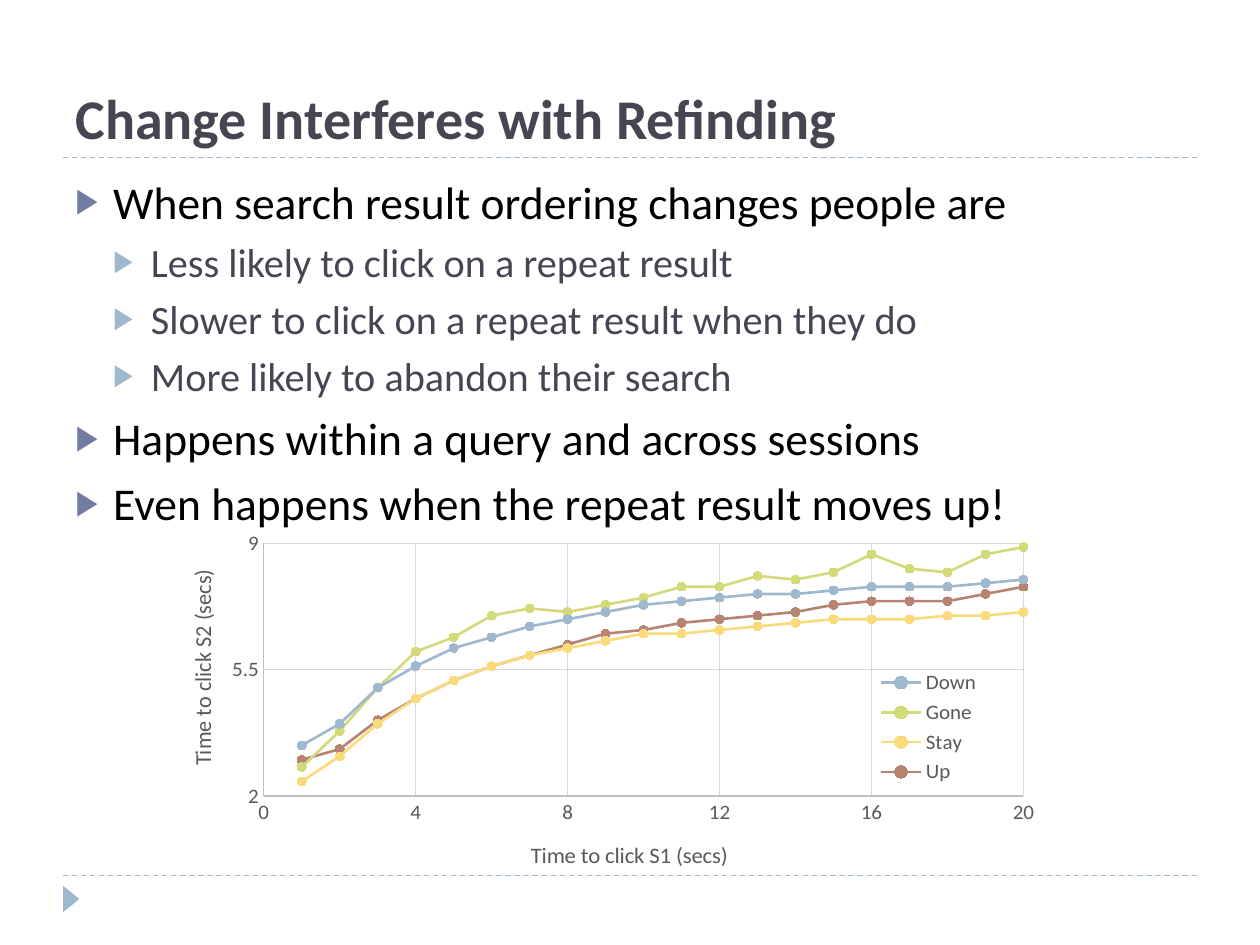
from lxml.etree import SubElement
from pptx import Presentation
from pptx.chart.data import XyChartData
from pptx.dml.color import RGBColor
from pptx.enum.chart import XL_CHART_TYPE, XL_LEGEND_POSITION, XL_MARKER_STYLE, XL_TICK_MARK
from pptx.enum.dml import MSO_LINE
from pptx.enum.shapes import MSO_CONNECTOR, MSO_SHAPE
from pptx.enum.text import MSO_ANCHOR, MSO_AUTO_SIZE, PP_ALIGN
from pptx.oxml import parse_xml
from pptx.oxml.ns import nsdecls, qn
from pptx.util import Inches, Pt

# Content
FONT = "Calibri"
TITLE = "Change Interferes with Refinding"
BULLETS = [
    (0, "When search result ordering changes people are"),
    (1, "Less likely to click on a repeat result"),
    (1, "Slower to click on a repeat result when they do"),
    (1, "More likely to abandon their search"),
    (0, "Happens within a query and across sessions"),
    (0, "Even happens when the repeat result moves up!"),
]
# Per level: text size, text colour, bullet colour, space before
LEVELS = [(26, "000000", "727CA3", 6), (23, "464653", "9FB8CD", 5)]
CLICK_TIMES = [
    ("Down", "9FB8CD", [3.4, 4, 5, 5.6, 6.1, 6.4, 6.7, 6.9, 7.1, 7.3,
                        7.4, 7.5, 7.6, 7.6, 7.7, 7.8, 7.8, 7.8, 7.9, 8]),
    ("Gone", "D2DA7A", [2.8, 3.8, 5, 6, 6.4, 7, 7.2, 7.1, 7.3, 7.5,
                        7.8, 7.8, 8.1, 8, 8.2, 8.7, 8.3, 8.2, 8.7, 8.9]),
    ("Stay", "FADA7A", [2.4, 3.1, 4, 4.7, 5.2, 5.6, 5.9, 6.1, 6.3, 6.5,
                        6.5, 6.6, 6.7, 6.8, 6.9, 6.9, 6.9, 7, 7, 7.1]),
    ("Up", "B88472", [3, 3.3, 4.1, 4.7, 5.2, 5.6, 5.9, 6.2, 6.5, 6.6,
                      6.8, 6.9, 7, 7.1, 7.3, 7.4, 7.4, 7.4, 7.6, 7.8]),
]
ACCENT, CHART_TEXT = "9FB8CD", "595959"


def rgb(color):
    return RGBColor.from_string(color)


def style_font(font, size, color, bold=False):
    font.name, font.size, font.bold = FONT, Pt(size), bold
    font.color.rgb = rgb(color)


def style_line(line, color, width):
    line.color.rgb = rgb(color)
    line.width = Pt(width)


def add_bullet(paragraph, level):
    size, color, bullet_color, space = LEVELS[level]
    paragraph.level = level
    paragraph.space_before = Pt(space)
    properties = paragraph._p.get_or_add_pPr()
    properties.set("marL", str(Inches(0.3 * (level + 1))))
    properties.set("indent", str(Inches(-0.3)))
    bullet = SubElement(properties, qn("a:buClr"))
    SubElement(bullet, qn("a:srgbClr"), val=bullet_color)
    SubElement(properties, qn("a:buSzPct"), val="76000")
    SubElement(properties, qn("a:buFont"), typeface="Arial")
    SubElement(properties, qn("a:buChar"), char="▶")
    return size, color


def place(element, x, y, width=None, height=None, inner=False):
    """Set a manual layout, in fractions of the chart area."""
    layout = element.find(qn("c:layout"))
    if layout is None:
        layout = parse_xml(f"<c:layout {nsdecls('c')}/>")
        overlay = element.find(qn("c:overlay"))
        if overlay is None:
            element.insert(0, layout)
        else:
            overlay.addprevious(layout)
    manual = SubElement(layout, qn("c:manualLayout"))
    settings = [("layoutTarget", "inner" if inner else None), ("xMode", "edge"),
                ("yMode", "edge"), ("x", x), ("y", y), ("w", width), ("h", height)]
    for tag, value in settings:
        if value is not None:
            SubElement(manual, qn(f"c:{tag}"), val=str(value))


def style_axis(axis, title, low, high, step, title_x, title_y):
    axis.minimum_scale, axis.maximum_scale, axis.major_unit = low, high, step
    axis.major_tick_mark = axis.minor_tick_mark = XL_TICK_MARK.NONE
    axis.has_major_gridlines = True
    style_line(axis.major_gridlines.format.line, "D9D9D9", 0.75)
    style_line(axis.format.line, "BFBFBF", 0.75)
    style_font(axis.tick_labels.font, 12, CHART_TEXT)
    axis.tick_labels.number_format = "General"
    axis.tick_labels.number_format_is_linked = False
    run = axis.axis_title.text_frame.paragraphs[0].add_run()
    run.text = title
    style_font(run.font, 13, CHART_TEXT)
    place(axis.axis_title._element, title_x, title_y)


prs = Presentation()
prs.slide_width, prs.slide_height = Inches(10), Inches(7.5)
slide = prs.slides.add_slide(prs.slide_layouts[5])
shapes = slide.shapes

# Dashed rules and corner marker
for rule_y in (6.95, 1.25):
    rule = shapes.add_connector(MSO_CONNECTOR.STRAIGHT, Inches(0.5), Inches(rule_y),
                                Inches(9.5), Inches(rule_y))
    style_line(rule.line, ACCENT, 0.75)
    rule.line.dash_style = MSO_LINE.DASH
    SubElement(rule._element.spPr, qn("a:effectLst"))
corner = shapes.add_shape(MSO_SHAPE.ISOSCELES_TRIANGLE, Inches(0.46), Inches(7.07),
                          Inches(0.21), Inches(0.13))
corner.rotation = 90
corner.shadow.inherit = False
corner.fill.solid()
corner.fill.fore_color.rgb = rgb(ACCENT)
corner.line.fill.background()

# Title
title = shapes.title
title.left, title.top, title.width, title.height = map(Inches, (0.5, 0.17, 9, 1.08))
title.text_frame.vertical_anchor = MSO_ANCHOR.BOTTOM
title.text_frame.auto_size = MSO_AUTO_SIZE.NONE
heading = title.text_frame.paragraphs[0]
heading.alignment = PP_ALIGN.LEFT
heading_run = heading.add_run()
heading_run.text = TITLE
style_font(heading_run.font, 32, "464653", bold=True)

# Bullets
body = shapes.add_textbox(Inches(0.5), Inches(1.33), Inches(9), Inches(5.4)).text_frame
body.word_wrap = True
for index, (level, text) in enumerate(BULLETS):
    paragraph = body.add_paragraph() if index else body.paragraphs[0]
    size, color = add_bullet(paragraph, level)
    run = paragraph.add_run()
    run.text = text
    style_font(run.font, size, color)

# Chart
data = XyChartData()
for name, _, times in CLICK_TIMES:
    points = data.add_series(name)
    for first_click, second_click in enumerate(times, start=1):
        points.add_data_point(first_click, second_click)
chart = shapes.add_chart(XL_CHART_TYPE.XY_SCATTER_LINES, Inches(1.24), Inches(4.21),
                         Inches(7.17), Inches(2.75), data).chart
chart.has_title = False
style_font(chart.font, 10, "000000")
place(chart._chartSpace.chart.plotArea, 0.119, 0.039, 0.841, 0.75, inner=True)
style_axis(chart.category_axis, "Time to click S1 (secs)", 0, 20, 4, 0.41, 0.91)
style_axis(chart.value_axis, "Time to click S2 (secs)", 2, 9, 3.5, 0.03, 0.12)
chart.plots[0].vary_by_categories = False
for series, (_, color, _) in zip(chart.plots[0].series, CLICK_TIMES):
    series.smooth = False
    style_line(series.format.line, color, 1.5)
    series.marker.style, series.marker.size = XL_MARKER_STYLE.CIRCLE, 5
    series.marker.format.fill.solid()
    series.marker.format.fill.fore_color.rgb = rgb(color)
    style_line(series.marker.format.line, color, 0.75)

# Legend over the plot
chart.has_legend = True
chart.legend.position = XL_LEGEND_POSITION.RIGHT
chart.legend.include_in_layout = True
style_font(chart.legend.font, 12, CHART_TEXT)
place(chart.legend._element, 0.79, 0.4, 0.13, 0.37)

prs.save("out.pptx")
